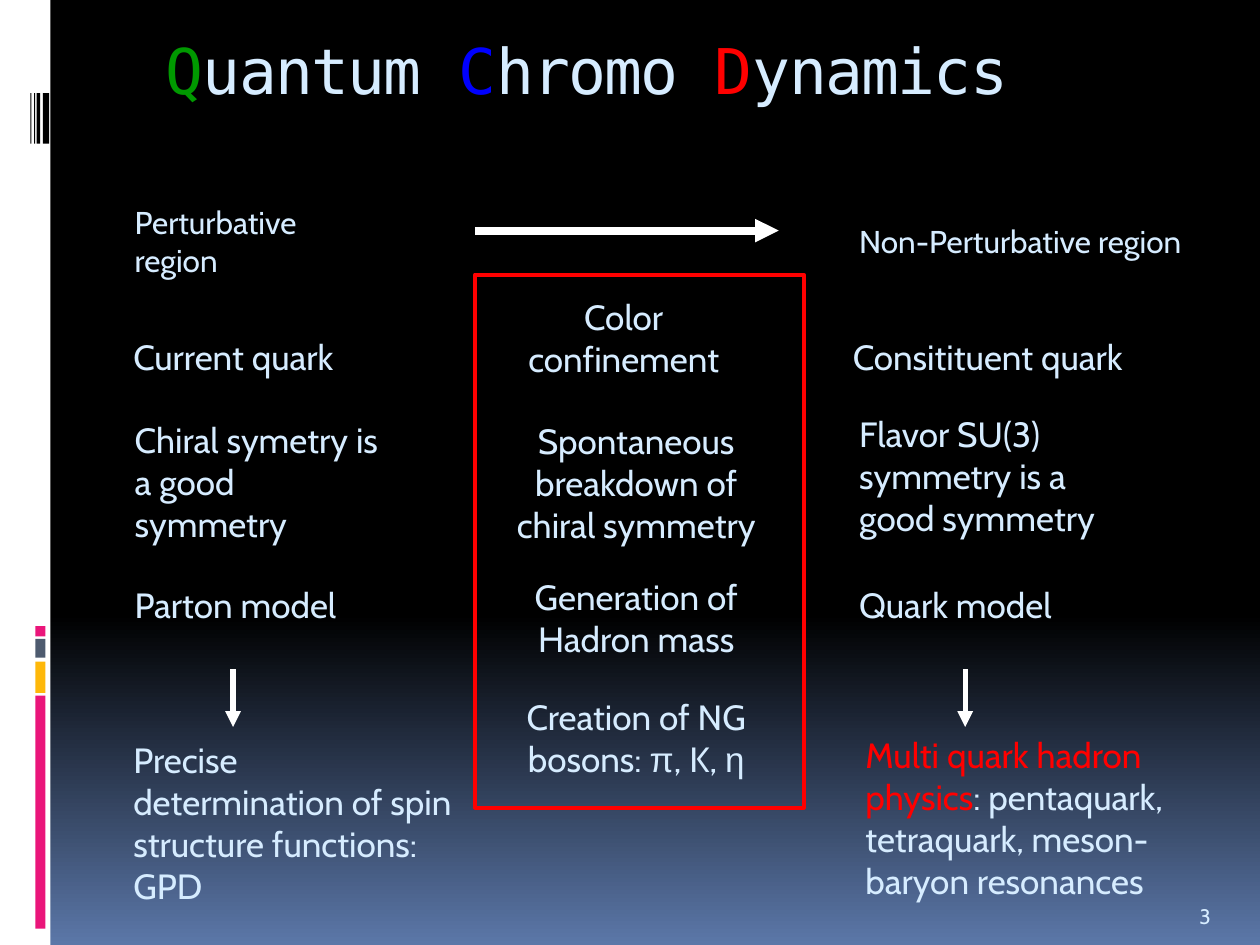
"""Build the Quantum Chromo Dynamics slide."""
from lxml import etree
from pptx import Presentation
from pptx.dml.color import RGBColor
from pptx.enum.shapes import MSO_CONNECTOR, MSO_SHAPE
from pptx.enum.text import MSO_ANCHOR, MSO_AUTO_SIZE, PP_ALIGN
from pptx.oxml.ns import qn
from pptx.util import Inches, Pt

RECT = MSO_SHAPE.RECTANGLE
LINE = MSO_CONNECTOR.STRAIGHT
TOP, MIDDLE, BOTTOM = MSO_ANCHOR.TOP, MSO_ANCHOR.MIDDLE, MSO_ANCHOR.BOTTOM
LEFT, CENTER = PP_ALIGN.LEFT, PP_ALIGN.CENTER

BLACK = RGBColor(0x00, 0x00, 0x00)
WHITE = RGBColor(0xFF, 0xFF, 0xFF)
STEEL = RGBColor(0x5B, 0x77, 0xA8)
SLATE = RGBColor(0x4E, 0x5B, 0x6F)
PINK = RGBColor(0xEA, 0x15, 0x7A)
GOLD = RGBColor(0xFE, 0xB8, 0x0A)
PALE = RGBColor(0xD6, 0xEC, 0xFF)
GREEN = RGBColor(0x00, 0x99, 0x00)
BLUE = RGBColor(0x00, 0x00, 0xFF)
RED = RGBColor(0xFF, 0x00, 0x00)
BODY, GREEK, MONO = "Cabin", "Arial", "DejaVu Sans Mono"


def add_run(para, text, size, color=PALE, name=BODY):
    run = para.add_run()
    run.text = text
    run.font.size = Pt(size)
    run.font.name = name
    run.font.color.rgb = color
    return run


def add_label(box, runs, size=20, align=LEFT, anchor=MIDDLE):
    label = slide.shapes.add_textbox(*map(Inches, box))
    frame = label.text_frame
    frame.word_wrap = True
    frame.vertical_anchor = anchor
    para = frame.paragraphs[0]
    para.alignment = align
    for text, *style in runs:
        add_run(para, text, size, *style)


deck = Presentation()
deck.slide_width, deck.slide_height = Inches(10), Inches(7.5)
slide = deck.slides.add_slide(deck.slide_layouts[5])

back = slide.background.fill
back.gradient()
back.gradient_angle = 270
for stop, color, place in zip(back.gradient_stops, (BLACK, STEEL), (0.65, 1)):
    stop.color.rgb = color
    stop.position = place

bars = [
    (0, 0, 0.4, 7.5, WHITE),
    (0.28, 5.52, 0.08, 1.85, PINK),
    (0.28, 5.25, 0.08, 0.25, GOLD),
    (0.28, 5.07, 0.08, 0.15, SLATE),
    (0.28, 4.97, 0.08, 0.08, PINK),
]
bars += [(left, 0.74, wide, 0.4, BLACK) for left, wide in
         ((0.34, 0.05), (0.29, 0.03), (0.27, 0.01), (0.24, 0.01))]
for *box, color in bars:
    bar = slide.shapes.add_shape(RECT, *map(Inches, box))
    bar.shadow.inherit = False
    bar.fill.solid()
    bar.fill.fore_color.rgb = color
    bar.line.fill.background()

title = slide.shapes.title
title.left, title.top = Inches(1.21), Inches(0.17)
title.width, title.height = Inches(7.67), Inches(0.82)
frame = title.text_frame
frame.auto_size = MSO_AUTO_SIZE.NONE
frame.vertical_anchor = TOP
frame.margin_top = Inches(0.08)
para = frame.paragraphs[0]
para.alignment = LEFT
for head, rest, color in (("Q", "uantum ", GREEN), ("C", "hromo ", BLUE),
                          ("D", "ynamics", RED)):
    for text, tint in ((head, color), (rest, PALE)):
        run = add_run(para, text, 36, tint, MONO)
        run.font._element.set("spc", "-100")

add_label((9.42, 7.02, 0.5, 0.4), [("3",)], 12, anchor=BOTTOM)

sides = [
    (0.97, 1.5, 2.16, 18, "Perturbative region"),
    (6.72, 1.5, 2.9, 18, "Non-Perturbative region"),
    (0.96, 2.42, 2.16, 20, "Current quark"),
    (6.67, 2.42, 2.76, 20, "Consitituent quark"),
    (0.97, 3.41, 2.16, 20, "Chiral symetry is a good symmetry"),
    (6.72, 3.36, 2.16, 20, "Flavor SU(3) symmetry is a good symmetry"),
    (0.97, 4.39, 2.16, 20, "Parton model"),
    (6.72, 4.39, 2.16, 20, "Quark model"),
]
for left, top, wide, size, text in sides:
    add_label((left, top, wide, 0.82), [(text,)], size)

middle = [
    (3.87, 2.27, [("Color confinement",)]),
    (3.97, 3.42, [("Spontaneous breakdown of chiral symmetry",)]),
    (3.97, 4.49, [("Generation of Hadron mass",)]),
    (3.97, 5.44, [("Creation of NG bosons: ",), ("π", PALE, GREEK),
                  (", K, ",), ("η", PALE, GREEK)]),
]
for left, top, runs in middle:
    add_label((left, top, 2.16, 0.82), runs, align=CENTER)

add_label((0.96, 5.81, 2.76, 1.44),
          [("Precise determination of spin structure functions: GPD",)])
add_label((6.77, 5.77, 2.76, 1.44),
          [("Multi quark hadron physics", RED),
           (": pentaquark, tetraquark, meson-baryon resonances",)])

frame = slide.shapes.add_shape(RECT, *map(Inches, (3.77, 2.18, 2.61, 4.23)))
frame.shadow.inherit = False
frame.fill.background()
frame.line.color.rgb = RED
frame.line.width = Pt(2.25)

for *ends, width in ((3.77, 1.83, 6.18, 1.83, 4.5),
                     (1.85, 5.31, 1.85, 5.77, 3),
                     (7.66, 5.31, 7.66, 5.77, 3)):
    arrow = slide.shapes.add_connector(LINE, *map(Inches, ends))
    arrow.line.color.rgb = WHITE
    arrow.line.width = Pt(width)
    etree.SubElement(arrow.line._get_or_add_ln(), qn("a:tailEnd"), type="triangle")
    etree.SubElement(arrow._element.spPr, qn("a:effectLst"))

deck.save("out.pptx")
